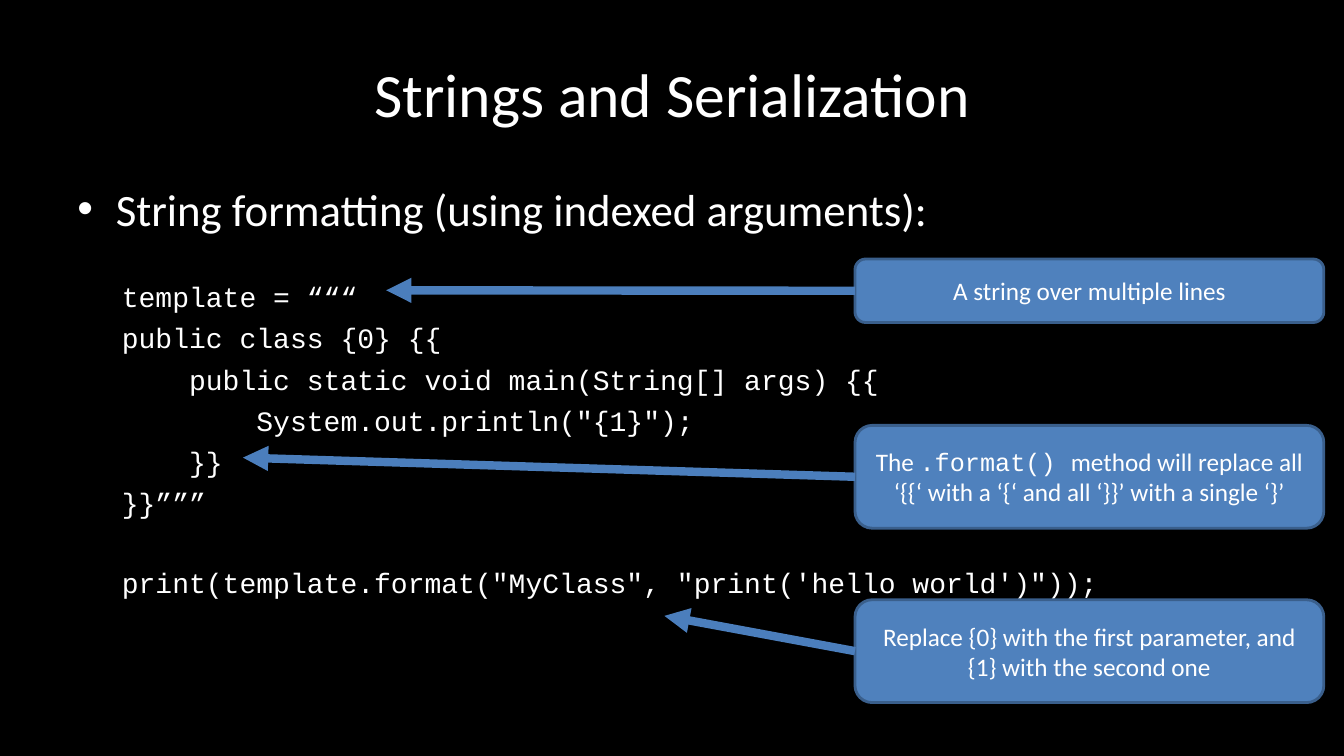
import dataclasses

import pptx
import pptx.dml.color
import pptx.enum.shapes
import pptx.enum.text
import pptx.oxml.ns
import pptx.util
from lxml import etree
from pptx.util import Inches


@dataclasses.dataclass(frozen=True)
class Theme:
    background: str = "000000"
    text: str = "FFFFFF"
    callout_fill: str = "4F81BD"
    callout_line: str = "3A5F8C"
    arrow: str = "4B7EBC"
    font: str = "Calibri"
    code_font: str = "Courier New"
    title_size: int = 44
    bullet_size: int = 32
    code_size: int = 20
    callout_size: int = 18
    callout_line_width: int = 2
    arrow_width: int = 6
    code_gap: float = 5.3
    section_gap: float = 32
    blank_line_gap: float = 33.3


THEME = Theme()
ALIGN = pptx.enum.text.PP_ALIGN
ANCHOR = pptx.enum.text.MSO_ANCHOR

CODE = [
    ("template = “““", THEME.section_gap),
    ("public class {0} {{", THEME.code_gap),
    ("    public static void main(String[] args) {{", THEME.code_gap),
    ('        System.out.println("{1}");', THEME.code_gap),
    ("    }}", THEME.code_gap),
    ("}}”””", THEME.code_gap),
    ("print(template.format(\"MyClass\", \"print('hello world')\"));", THEME.blank_line_gap),
]

CALLOUTS = [
    ((8.48, 2.57, 4.65, 0.63), (3.83, 2.88),
     [("A string over multiple lines", THEME.font)]),
    ((8.48, 4.22, 4.65, 1.02), (2.41, 4.54),
     [("The ", THEME.font), (".format() ", THEME.code_font),
      ("method will replace all ‘{{‘ with a ‘{‘ and all ‘}}’ with a single ‘}’", THEME.font)]),
    ((8.48, 5.95, 4.65, 1.02), (6.59, 6.11),
     [("Replace {0} with the first parameter, and {1} with the second one", THEME.font)]),
]


def color(value):
    return pptx.dml.color.RGBColor.from_string(value)


def add_text(paragraph, text, size, font=THEME.font, align=ALIGN.LEFT, before=0):
    paragraph.alignment = align
    if before:
        paragraph.space_before = pptx.util.Pt(before)
    run = paragraph.add_run()
    run.text = text
    run.font.name = font
    run.font.size = pptx.util.Pt(size)
    run.font.color.rgb = color(THEME.text)


def set_indent(paragraph, left, first=0, bullet=None):
    properties = paragraph._p.get_or_add_pPr()
    properties.set("marL", str(Inches(left)))
    properties.set("indent", str(Inches(first)))
    if bullet:
        font = etree.SubElement(properties, pptx.oxml.ns.qn("a:buFont"))
        font.set("typeface", "Arial")
        mark = etree.SubElement(properties, pptx.oxml.ns.qn("a:buChar"))
        mark.set("char", bullet)


def add_text_frame(slide, box, anchor):
    frame = slide.shapes.add_textbox(*map(Inches, box)).text_frame
    frame.word_wrap = True
    frame.vertical_anchor = anchor
    return frame


def add_title(slide, box):
    frame = add_text_frame(slide, box, ANCHOR.MIDDLE)
    add_text(frame.paragraphs[0], "Strings and Serialization", THEME.title_size, align=ALIGN.CENTER)


def add_body(slide, box):
    frame = add_text_frame(slide, box, ANCHOR.TOP)
    heading = frame.paragraphs[0]
    set_indent(heading, 0.38, -0.38, "•")
    add_text(heading, "String formatting (using indexed arguments):", THEME.bullet_size)
    for line, gap in CODE:
        paragraph = frame.add_paragraph()
        set_indent(paragraph, 0.44)
        add_text(paragraph, line, THEME.code_size, font=THEME.code_font, before=gap)


def add_callout(slide, box, target, runs):
    shape = slide.shapes.add_shape(
        pptx.enum.shapes.MSO_SHAPE.ROUNDED_RECTANGLE, *map(Inches, box))
    shape.shadow.inherit = False
    shape.fill.solid()
    shape.fill.fore_color.rgb = color(THEME.callout_fill)
    shape.line.color.rgb = color(THEME.callout_line)
    shape.line.width = pptx.util.Pt(THEME.callout_line_width)
    frame = shape.text_frame
    frame.word_wrap = True
    frame.vertical_anchor = ANCHOR.MIDDLE
    for text, font in runs:
        add_text(frame.paragraphs[0], text, THEME.callout_size, font=font, align=ALIGN.CENTER)
    add_arrow(slide, shape, target)


def add_arrow(slide, shape, target):
    end_x, end_y = map(Inches, target)
    arrow = slide.shapes.add_connector(
        pptx.enum.shapes.MSO_CONNECTOR.STRAIGHT,
        shape.left, shape.top + shape.height // 2, end_x, end_y)
    arrow.begin_connect(shape, 1)
    arrow.line.color.rgb = color(THEME.arrow)
    arrow.line.width = pptx.util.Pt(THEME.arrow_width)
    head = etree.SubElement(arrow.line._get_or_add_ln(), pptx.oxml.ns.qn("a:tailEnd"))
    head.set("type", "triangle")
    etree.SubElement(arrow._element.spPr, pptx.oxml.ns.qn("a:effectLst"))


def main():
    presentation = pptx.Presentation()
    presentation.slide_width = Inches(13.33)
    presentation.slide_height = Inches(7.5)
    slide = presentation.slides.add_slide(presentation.slide_layouts[6])
    slide.background.fill.solid()
    slide.background.fill.fore_color.rgb = color(THEME.background)
    add_title(slide, (0.67, 0.3, 12, 1.25))
    add_body(slide, (0.67, 1.75, 12, 4.95))
    for box, target, runs in CALLOUTS:
        add_callout(slide, box, target, runs)
    presentation.save("out.pptx")


if __name__ == "__main__":
    main()
